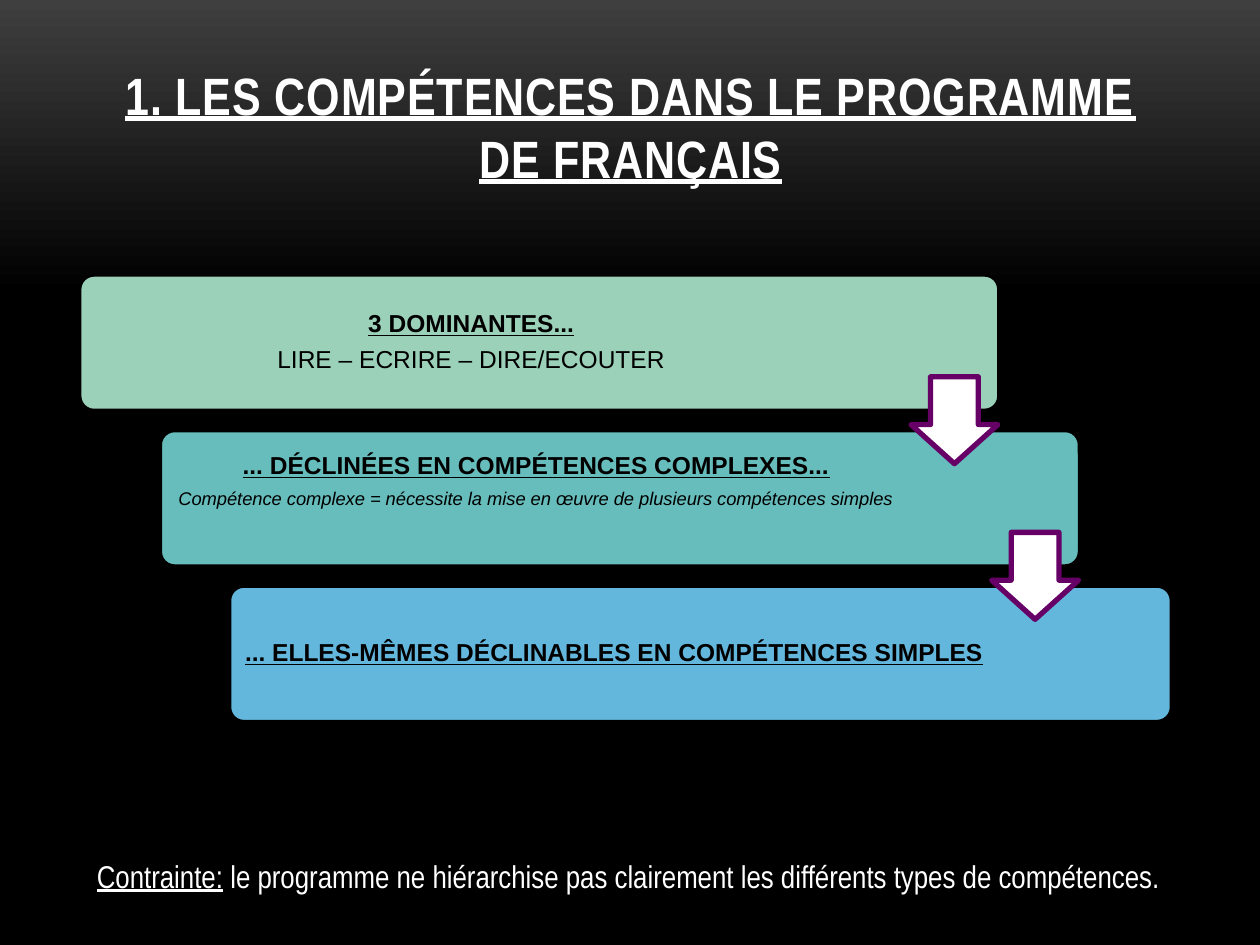
from pptx import Presentation
from pptx.dml.color import RGBColor
from pptx.enum.shapes import MSO_SHAPE
from pptx.enum.text import MSO_ANCHOR, PP_ALIGN
from pptx.util import Inches, Pt

ROUNDED, ARROW = MSO_SHAPE.ROUNDED_RECTANGLE, MSO_SHAPE.DOWN_ARROW
TOP, MIDDLE, BOTTOM = MSO_ANCHOR.TOP, MSO_ANCHOR.MIDDLE, MSO_ANCHOR.BOTTOM
LEFT, CENTER = PP_ALIGN.LEFT, PP_ALIGN.CENTER

COLUMNS, ROWS = 100, 75
BLACK, WHITE, PURPLE = "000000", "FFFFFF", "660066"
HEADING = {"size": 14, "bold": True, "underline": True}


def color(value):
    return RGBColor.from_string(value)


class SlideBuilder:
    body_font = "Arial"
    narrow_font = "Arial Narrow"

    def __init__(self, deck):
        self.page = deck.slides.add_slide(deck.slide_layouts[6])
        self.column = deck.slide_width / COLUMNS
        self.row = deck.slide_height / ROWS

    def place(self, left, top, width, height):
        """Turn grid columns and rows into slide lengths."""
        return (round(left * self.column), round(top * self.row),
                round(width * self.column), round(height * self.row))

    def background(self, start, end, reach):
        fill = self.page.background.fill
        fill.gradient()
        fill.gradient_angle = 270
        for stop, value, position in zip(fill.gradient_stops, (start, end), (0, reach)):
            stop.color.rgb = color(value)
            stop.position = position

    def shape(self, kind, area, adjustments, fill, line, weight):
        shape = self.page.shapes.add_shape(kind, *self.place(*area))
        shape.shadow.inherit = False
        for index, value in enumerate(adjustments):
            shape.adjustments[index] = value
        shape.fill.solid()
        shape.fill.fore_color.rgb = color(fill)
        shape.line.color.rgb = color(line)
        shape.line.width = Pt(weight)

    def text(self, area, lines, anchor, align, font, ink, margins=None,
             spacing=None, gap=0):
        """Each line is a list of (words, style) pairs."""
        box = self.page.shapes.add_textbox(*self.place(*area))
        frame = box.text_frame
        frame.word_wrap = True
        frame.vertical_anchor = anchor
        if margins:
            (frame.margin_left, frame.margin_top,
             frame.margin_right, frame.margin_bottom) = map(Inches, margins)
        for index, line in enumerate(lines):
            para = frame.paragraphs[0] if index == 0 else frame.add_paragraph()
            para.alignment = align
            para.line_spacing = spacing
            para.space_after = Pt(gap)
            for words, style in line:
                self.span(para, words, font, ink, **style)

    def span(self, para, words, font, ink, size, bold=False, italic=False,
             underline=False, tracking=0):
        span = para.add_run()
        span.text = words
        span.font.name = font
        span.font.size = Pt(size)
        span.font.color.rgb = color(ink)
        span.font.bold, span.font.italic = bold, italic
        span.font.underline = underline
        if tracking:
            span.font._element.set("spc", str(round(tracking * 100)))

    def card(self, area, fill, text_width, lines, bottom):
        left, top, _, height = area
        self.shape(ROUNDED, area, [0.1], fill, BLACK, 0.85)
        self.text((left, top, text_width, height), lines, MIDDLE, CENTER,
                  self.body_font, BLACK, (0.06, 0.06, 0.06, bottom), 0.9, 5.5)

    def arrow(self, right, top, size=6.9):
        self.shape(ARROW, (right - size, top, size, size), [0.55, 0.45],
                   WHITE, PURPLE, 3)


def main():
    deck = Presentation()
    deck.slide_width, deck.slide_height = Inches(10), Inches(7.5)
    slide = SlideBuilder(deck)
    slide.background("3F3F3F", BLACK, 0.31)

    # Title
    slide.text((6.7, 3, 86.7, 12.5),
               [[("1. LES COMPÉTENCES DANS LE PROGRAMME DE FRANÇAIS",
                  {"size": 30, "bold": True, "underline": True, "tracking": 0.5})]],
               BOTTOM, CENTER, slide.narrow_font, WHITE)

    # Staircase of cards: left, width, fill, text width, lines, bottom margin
    cards = [
        (6.4, 72.8, "9BD0B9", 62,
         [[("3 DOMINANTES...", HEADING)],
          [("LIRE – ECRIRE – DIRE/ECOUTER", {"size": 14})]], 0.06),
        (12.8, 72.8, "67BCBC", 59.5,
         [[("... DÉCLINÉES EN COMPÉTENCES COMPLEXES...", HEADING)],
          [("Compétence complexe = nécessite la mise en œuvre de plusieurs "
            "compétences simples", {"size": 10.5, "italic": True})]], 0.33),
        (18.3, 74.6, "64B7DC", 60.9,
         [[("... ELLES-MÊMES DÉCLINABLES EN COMPÉTENCES SIMPLES", HEADING)]], 0.06),
    ]
    first_top, pitch, height = 21.9, 12.35, 10.6
    for index, (left, width, fill, text_width, lines, bottom) in enumerate(cards):
        area = (left, first_top + index * pitch, width, height)
        slide.card(area, fill, text_width, lines, bottom)

    # Arrows leave from the right edge of every card but the last
    for index, (left, width, *_) in enumerate(cards[:-1]):
        slide.arrow(left + width, first_top + index * pitch + 8)

    # Closing remark
    slide.text((6.7, 67.5, 86.7, 4),
               [[("Contrainte:", {"size": 18, "underline": True}),
                 (" le programme ne hiérarchise pas clairement les différents "
                  "types de compétences.", {"size": 18})]],
               TOP, LEFT, slide.narrow_font, WHITE)

    deck.save("out.pptx")


if __name__ == "__main__":
    main()
